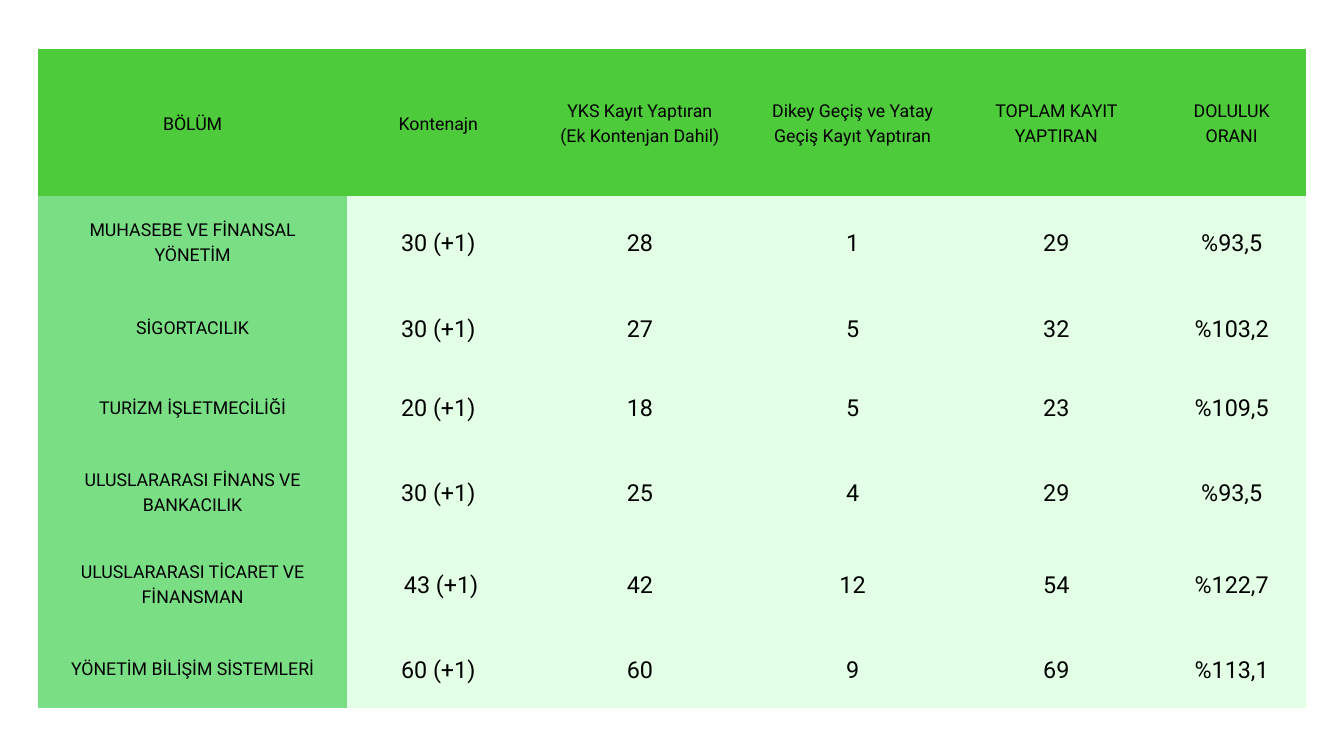
from dataclasses import dataclass

import pptx
import pptx.dml.color
import pptx.enum.text
import pptx.oxml
import pptx.oxml.ns
import pptx.table
import pptx.util
from pptx.util import Cm

BLACK = pptx.dml.color.RGBColor(0x00, 0x00, 0x00)
HEADER_GREEN = pptx.dml.color.RGBColor(0x4E, 0xCB, 0x3A)
DEPARTMENT_GREEN = pptx.dml.color.RGBColor(0x7A, 0xDF, 0x84)
FIGURE_GREEN = pptx.dml.color.RGBColor(0xE3, 0xFF, 0xE5)

FONT = "Roboto"
LINE_SPACING = 1.4
CELL_MARGIN = Cm(0.53)
COLUMN_WIDTHS = [Cm(width) for width in (11.66, 6.91, 8.33, 7.75, 7.65, 5.61)]
HEADER_HEIGHT = Cm(5.56)
TALL_ROW = Cm(3.45)
SHORT_ROW = Cm(3)


@dataclass(frozen=True)
class CellStyle:
    fill: pptx.dml.color.RGBColor
    size: int


@dataclass(frozen=True)
class Department:
    name: str
    quota: str
    exam_entrants: int
    transfers: int
    total: int
    occupancy: str
    height: pptx.util.Length

    def texts(self) -> list[str]:
        return [self.name, self.quota, str(self.exam_entrants),
                str(self.transfers), str(self.total), self.occupancy]


HEADER_STYLE = CellStyle(HEADER_GREEN, 19)
DEPARTMENT_STYLE = CellStyle(DEPARTMENT_GREEN, 19)
FIGURE_STYLE = CellStyle(FIGURE_GREEN, 25)

HEADERS = [
    "BÖLÜM",
    "Kontenajn",
    "YKS Kayıt Yaptıran\n(Ek Kontenjan Dahil)",
    "Dikey Geçiş ve Yatay Geçiş Kayıt Yaptıran",
    "TOPLAM KAYIT YAPTIRAN",
    "DOLULUK ORANI",
]
DEPARTMENTS = [
    Department("MUHASEBE VE FİNANSAL YÖNETİM", "30 (+1)", 28, 1, 29, "%93,5", TALL_ROW),
    Department("SİGORTACILIK", "30 (+1)", 27, 5, 32, "%103,2", SHORT_ROW),
    Department("TURİZM İŞLETMECİLİĞİ", "20 (+1)", 18, 5, 23, "%109,5", SHORT_ROW),
    Department("ULUSLARARASI FİNANS VE BANKACILIK", "30 (+1)", 25, 4, 29, "%93,5", TALL_ROW),
    Department("ULUSLARARASI TİCARET VE FİNANSMAN", " 43 (+1)", 42, 12, 54, "%122,7", TALL_ROW),
    Department("YÖNETİM BİLİŞİM SİSTEMLERİ", "60 (+1)", 60, 9, 69, "%113,1", SHORT_ROW),
]


def hide_borders(cell: pptx.table._Cell) -> None:
    properties = cell._tc.get_or_add_tcPr()
    namespace = pptx.oxml.ns.nsdecls("a")
    for position, side in enumerate("LRTB"):
        border = pptx.oxml.parse_xml(f'<a:ln{side} {namespace} w="0"><a:noFill/></a:ln{side}>')
        properties.insert(position, border)


def fill_cell(cell: pptx.table._Cell, text: str, style: CellStyle) -> None:
    """Style the cell and write one paragraph for each line of text."""
    cell.fill.solid()
    cell.fill.fore_color.rgb = style.fill
    hide_borders(cell)
    cell.vertical_anchor = pptx.enum.text.MSO_ANCHOR.MIDDLE
    cell.margin_left = cell.margin_right = CELL_MARGIN
    cell.margin_top = cell.margin_bottom = CELL_MARGIN
    for index, line in enumerate(text.split("\n")):
        frame = cell.text_frame
        para = frame.add_paragraph() if index else frame.paragraphs[0]
        para.alignment = pptx.enum.text.PP_ALIGN.CENTER
        para.line_spacing = pptx.util.Pt(style.size * LINE_SPACING)
        span = para.add_run()
        span.text = line
        span.font.name = FONT
        span.font.size = pptx.util.Pt(style.size)
        span.font.bold = False
        span.font.color.rgb = BLACK


def add_enrolment_table(page: pptx.slide.Slide) -> None:
    heights = [HEADER_HEIGHT] + [department.height for department in DEPARTMENTS]
    table = page.shapes.add_table(
        len(heights), len(COLUMN_WIDTHS), Cm(1.45), Cm(1.84),
        sum(COLUMN_WIDTHS), sum(heights)).table
    for column, width in zip(table.columns, COLUMN_WIDTHS):
        column.width = width
    for row, height in zip(table.rows, heights):
        row.height = height
    for column, text in enumerate(HEADERS):
        fill_cell(table.cell(0, column), text, HEADER_STYLE)
    for row, department in enumerate(DEPARTMENTS, start=1):
        for column, text in enumerate(department.texts()):
            style = FIGURE_STYLE if column else DEPARTMENT_STYLE
            fill_cell(table.cell(row, column), text, style)


def main() -> None:
    deck = pptx.Presentation()
    deck.slide_width, deck.slide_height = Cm(50.8), Cm(28.58)
    page = deck.slides.add_slide(deck.slide_layouts[6])
    add_enrolment_table(page)
    deck.save("out.pptx")


if __name__ == "__main__":
    main()
